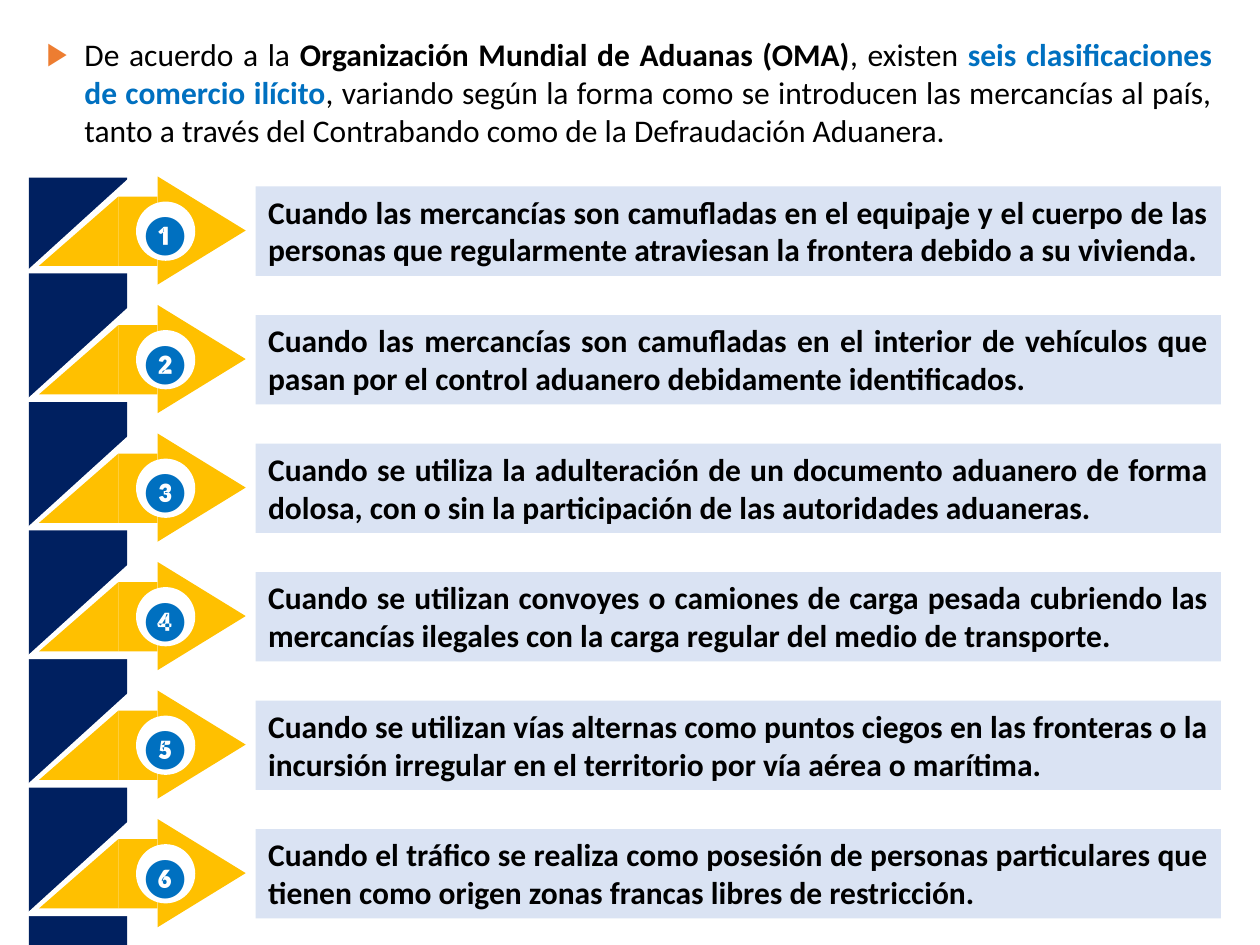
from lxml.etree import SubElement
from pptx import Presentation
from pptx.dml.color import RGBColor
from pptx.enum.shapes import MSO_SHAPE
from pptx.enum.text import MSO_ANCHOR, MSO_AUTO_SIZE, PP_ALIGN
from pptx.oxml.ns import qn
from pptx.util import Inches, Pt

BLACK = RGBColor(0x00, 0x00, 0x00)
WHITE = RGBColor(0xFF, 0xFF, 0xFF)
NAVY = RGBColor(0x00, 0x20, 0x60)
BLUE = RGBColor(0x00, 0x70, 0xC0)
GOLD = RGBColor(0xFF, 0xC0, 0x00)
PALE_BLUE = RGBColor(0xDA, 0xE3, 0xF3)
ORANGE = "ED7D31"
FONT = "Calibri"

INTRO = [
    ("De acuerdo a la ", False, BLACK),
    ("Organización Mundial de Aduanas (OMA)", True, BLACK),
    (", existen ", False, BLACK),
    ("seis clasificaciones de comercio ilícito", True, BLUE),
    (", variando según la forma como se introducen las mercancías al país, "
     "tanto a través del Contrabando como de la Defraudación Aduanera.", False, BLACK),
]
CLASSIFICATIONS = [
    ("❶", "Cuando las mercancías son camufladas en el equipaje y el cuerpo de las "
          "personas que regularmente atraviesan la frontera debido a su vivienda."),
    ("❷", "Cuando las mercancías son camufladas en el interior de vehículos que "
          "pasan por el control aduanero debidamente identificados."),
    ("❸", "Cuando se utiliza la adulteración de un documento aduanero de forma "
          "dolosa, con o sin la participación de las autoridades aduaneras."),
    ("❹", "Cuando se utilizan convoyes o camiones de carga pesada cubriendo las "
          "mercancías ilegales con la carga regular del medio de transporte."),
    ("❺", "Cuando se utilizan vías alternas como puntos ciegos en las fronteras o la "
          "incursión irregular en el territorio por vía aérea o marítima."),
    ("❻", "Cuando el tráfico se realiza como posesión de personas particulares que "
          "tienen como origen zonas francas libres de restricción."),
]


def add_run(paragraph, text, size, bold, color):
    run = paragraph.add_run()
    run.text = text
    run.font.name = FONT
    run.font.size = Pt(size)
    run.font.bold = bold
    run.font.color.rgb = color


def add_block(slide, kind, left, top, width, height, color):
    block = slide.shapes.add_shape(kind, left, top, width, height)
    block.shadow.inherit = False
    block.fill.solid()
    block.fill.fore_color.rgb = color
    block.line.fill.background()
    return block


def add_wedge(slide, left, top, width, height, color):
    wedge = add_block(slide, MSO_SHAPE.RIGHT_TRIANGLE, left, top, width, height, color)
    wedge._element.spPr.find(qn("a:xfrm")).set("flipH", "1")


def add_intro(slide, left, top, width, height):
    intro = slide.placeholders[1]
    intro.left, intro.top, intro.width, intro.height = left, top, width, height
    frame = intro.text_frame
    frame.word_wrap = True
    frame.auto_size = MSO_AUTO_SIZE.NONE
    frame.vertical_anchor = MSO_ANCHOR.TOP
    paragraph = frame.paragraphs[0]
    paragraph.alignment = PP_ALIGN.JUSTIFY
    paragraph.space_before = Pt(0)
    for text, bold, color in INTRO:
        add_run(paragraph, text, 18, bold, color)
    properties = paragraph._p.get_or_add_pPr()
    properties.set("marL", str(Inches(0.3)))
    properties.set("indent", str(Inches(-0.3)))
    bullet_color = SubElement(properties, qn("a:buClr"))
    SubElement(bullet_color, qn("a:srgbClr"), val=ORANGE)
    SubElement(properties, qn("a:buFont"), typeface=FONT)
    SubElement(properties, qn("a:buChar"), char="▶")


def add_arrow(slide, left, top):
    add_wedge(slide, left, top, Inches(0.87), Inches(0.79), WHITE)
    shaft_top = top + Inches(0.18)
    add_wedge(slide, left + Inches(0.12), shaft_top, Inches(0.63), Inches(0.55), GOLD)
    add_block(slide, MSO_SHAPE.RECTANGLE, left + Inches(0.75), shaft_top,
              Inches(0.31), Inches(0.55), GOLD)
    head = add_block(slide, MSO_SHAPE.ISOSCELES_TRIANGLE, left + Inches(0.98),
                     top + Inches(0.1), Inches(0.86), Inches(0.7), GOLD)
    head.rotation = 90


def add_badge(slide, left, top, number):
    add_block(slide, MSO_SHAPE.OVAL, left + Inches(0.16), top,
              Inches(0.47), Inches(0.47), WHITE)
    label = slide.shapes.add_textbox(left, top + Inches(0.02), Inches(0.78), Inches(0.47))
    label.text_frame.word_wrap = True
    paragraph = label.text_frame.paragraphs[0]
    paragraph.alignment = PP_ALIGN.CENTER
    add_run(paragraph, number, 22, True, BLUE)


def add_statement(slide, left, top, width, height, text):
    statement = add_block(slide, MSO_SHAPE.RECTANGLE, left, top, width, height, PALE_BLUE)
    frame = statement.text_frame
    frame.word_wrap = True
    frame.vertical_anchor = MSO_ANCHOR.TOP
    paragraph = frame.paragraphs[0]
    paragraph.alignment = PP_ALIGN.JUSTIFY
    add_run(paragraph, text, 18, True, BLACK)


def add_classifications(slide, left, top, width, height):
    add_block(slide, MSO_SHAPE.RECTANGLE, left + Inches(0.04), top + Inches(0.03),
              Inches(0.78), height - Inches(0.03), NAVY)
    pitch = height / len(CLASSIFICATIONS)
    for index, (number, text) in enumerate(CLASSIFICATIONS):
        row_top = top + round(index * pitch)
        add_arrow(slide, left, row_top)
        add_badge(slide, left + Inches(0.73), row_top + Inches(0.22), number)
        add_statement(slide, left + Inches(1.84), row_top + Inches(0.1),
                      width - Inches(1.84), Inches(0.71), text)


def main():
    presentation = Presentation()
    presentation.slide_width = Inches(10)
    presentation.slide_height = Inches(7.5)
    slide = presentation.slides.add_slide(presentation.slide_layouts[1])
    title = slide.shapes.title._element
    title.getparent().remove(title)
    add_intro(slide, Inches(0.27), Inches(0.23), Inches(9.45), Inches(1.01))
    add_classifications(slide, Inches(0.19), Inches(1.38), Inches(9.5), Inches(6.12))
    presentation.save("out.pptx")


if __name__ == "__main__":
    main()
